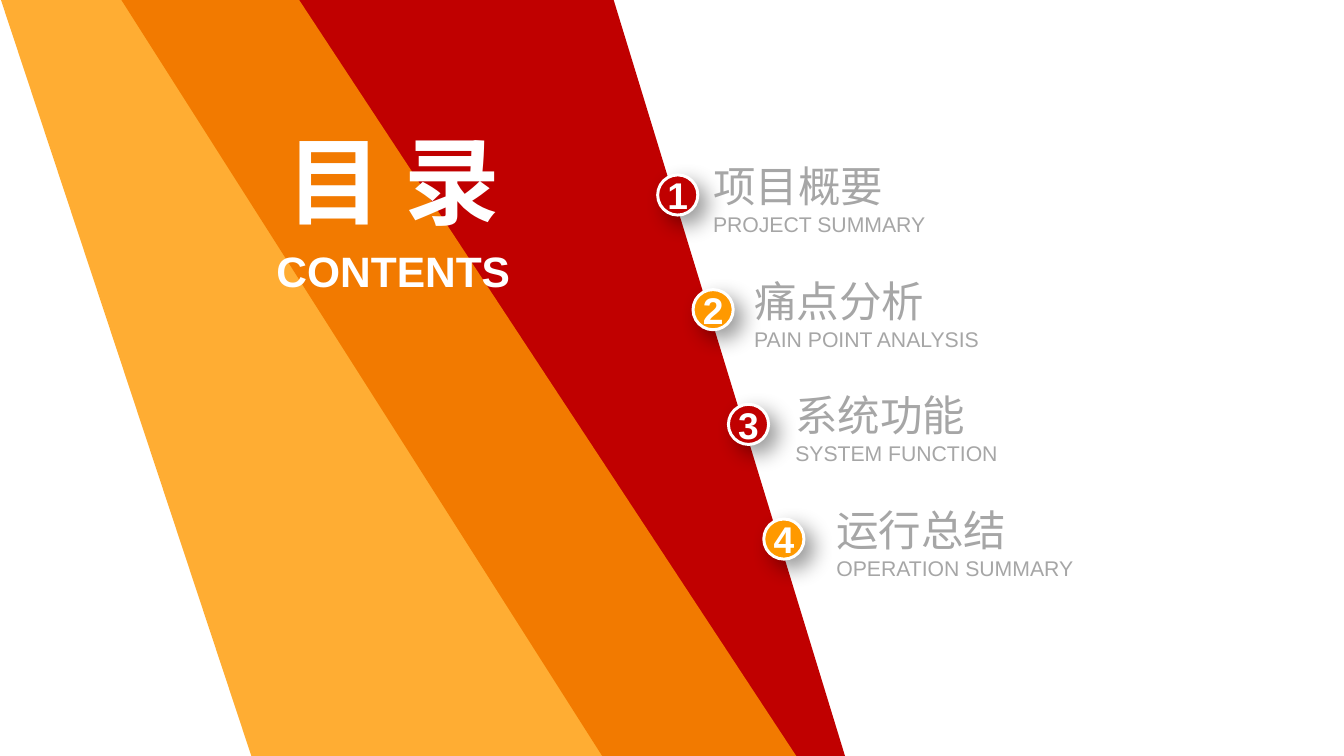
from lxml.etree import SubElement
from pptx import Presentation
from pptx.dml.color import RGBColor as RGB
from pptx.enum.shapes import MSO_SHAPE as SHAPE
from pptx.enum.text import MSO_ANCHOR as ANCHOR, MSO_AUTO_SIZE as AUTO, PP_ALIGN as ALIGN
from pptx.oxml.ns import qn
from pptx.util import Inches, Pt

COLORS = {"red": "C00000", "orange": "FF9900", "white": "FFFFFF", "gray": "A6A6A6", "black": "000000"}
FONT = "Arial"
TITLE = "目 录"
SUBTITLE = "CONTENTS"
SECTIONS = [
    ("项目概要", "PROJECT SUMMARY"),
    ("痛点分析", "PAIN POINT ANALYSIS"),
    ("系统功能", "SYSTEM FUNCTION"),
    ("运行总结", "OPERATION SUMMARY"),
]
BANDS = [
    ("red", 100, [(1.27, 0), (6.42, 0), (8.84, 7.91), (6.3, 7.91)]),
    ("orange", 80, [(0.01, 0), (3.13, 0), (8.33, 7.91), (2.63, 7.91)]),
]
BADGE_SIZE = 0.42
BADGE_START, BADGE_STEP = (6.88, 1.83), (0.37, 1.2)
LABEL_START, LABEL_STEP = (7.46, 1.67), (0.43, 1.2)


def rgb(name):
    return RGB.from_string(COLORS[name])


def set_alpha(color, percent):
    SubElement(color, qn("a:alpha"), val=str(percent * 1000))


def write(shape, lines, color, align=ALIGN.LEFT, bold=False, anchor=ANCHOR.MIDDLE):
    tf = shape.text_frame
    tf.margin_left = tf.margin_right = tf.margin_top = tf.margin_bottom = 0
    tf.auto_size = AUTO.NONE
    tf.word_wrap = True
    tf.vertical_anchor = anchor
    for i, (text, size) in enumerate(lines):
        p = tf.add_paragraph() if i else tf.paragraphs[0]
        p.alignment = align
        r = p.add_run()
        r.text = text
        r.font.name = FONT
        r.font.size = Pt(size)
        r.font.bold = bold
        r.font.color.rgb = rgb(color)


def add_band(slide, color, opacity, points):
    start, *rest = [(Inches(x), Inches(y)) for x, y in points]
    builder = slide.shapes.build_freeform(*start)
    builder.add_line_segments(rest, close=True)
    s = builder.convert_to_shape()
    s.shadow.inherit = False
    s.fill.solid()
    s.fill.fore_color.rgb = rgb(color)
    s.line.fill.background()
    if opacity < 100:
        set_alpha(s.element.spPr.find(qn("a:solidFill"))[0], opacity)


def add_badge(slide, left, top, number, color):
    s = slide.shapes.add_shape(SHAPE.OVAL, Inches(left), Inches(top), Inches(BADGE_SIZE), Inches(BADGE_SIZE))
    s.fill.solid()
    s.fill.fore_color.rgb = rgb(color)
    s.line.color.rgb = rgb("white")
    s.line.width = Pt(2.25)
    s.shadow.inherit = False
    effects = s.element.spPr.find(qn("a:effectLst"))
    shadow = SubElement(effects, qn("a:outerShdw"), blurRad=str(Pt(16)), dist=str(Pt(9)),
                        dir=str(45 * 60000), algn="tl", rotWithShape="0")
    set_alpha(SubElement(shadow, qn("a:srgbClr"), val=COLORS["black"]), 40)
    write(s, [(str(number), 28)], "white", ALIGN.CENTER, True)


def add_text(slide, left, top, width, height):
    return slide.shapes.add_textbox(Inches(left), Inches(top), Inches(width), Inches(height))


def main():
    prs = Presentation()
    prs.slide_width, prs.slide_height = Inches(14.06), Inches(7.91)
    slide = prs.slides.add_slide(prs.slide_layouts[5])

    for band in BANDS:
        add_band(slide, *band)

    for i, (name, english) in enumerate(SECTIONS):
        x, y = (a + i * d for a, d in zip(BADGE_START, BADGE_STEP))
        add_badge(slide, x, y, i + 1, ("red", "orange")[i % 2])
        x, y = (a + i * d for a, d in zip(LABEL_START, LABEL_STEP))
        write(add_text(slide, x, y, 3, 0.81), [(name, 32), (english, 16)], "gray")

    title = slide.shapes.title
    title.left, title.top, title.width, title.height = map(Inches, (2.68, 1.27, 2.87, 1.21))
    write(title, [(TITLE, 72)], "white", ALIGN.CENTER, True)
    title.element.getparent().append(title.element)
    write(add_text(slide, 2.84, 2.56, 2.55, 0.54), [(SUBTITLE, 32)], "white", ALIGN.CENTER, True, ANCHOR.TOP)

    prs.save("out.pptx")


if __name__ == "__main__":
    main()
